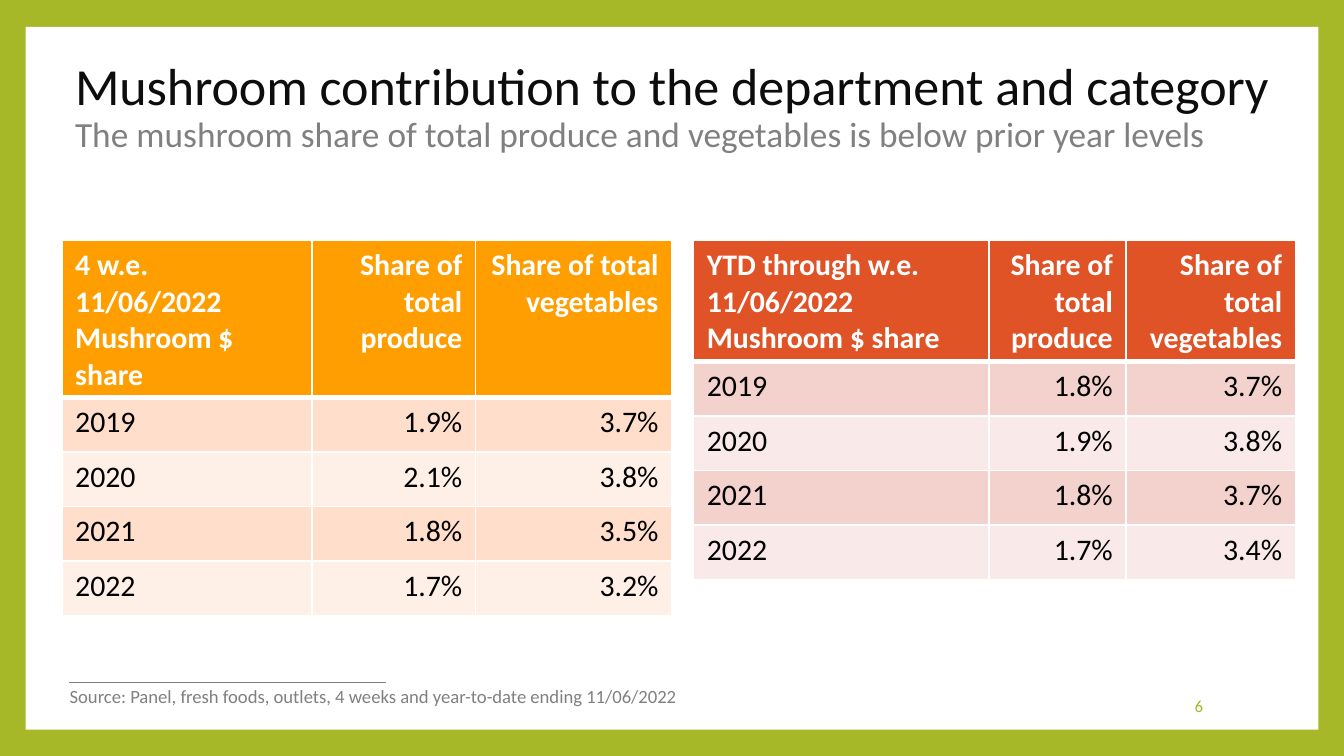
"""Build the mushroom share slide on a grid of tenths of an inch."""
from dataclasses import dataclass

from lxml.etree import SubElement
from pptx import Presentation
from pptx.dml.color import RGBColor
from pptx.enum.shapes import MSO_CONNECTOR, MSO_SHAPE
from pptx.enum.text import MSO_ANCHOR, PP_ALIGN
from pptx.oxml import parse_xml
from pptx.oxml.ns import nsdecls, qn
from pptx.util import Inches, Pt

COLS, ROWS = 100, 56.25
FONT = "Calibri"
HUES = {
    "green": "A6B727", "white": "FFFFFF", "ink": "0D0D0D", "black": "000000",
    "gray": "808080", "gold": "FE9E00", "peach": "FFDFCC", "cream": "FFF0E7",
    "rust": "DF5327", "rose": "F3D1CD", "blush": "F9E9E8",
}


@dataclass(frozen=True)
class Run:
    text: str
    size: float
    hue: str
    bold: bool = False


@dataclass(frozen=True)
class Label:
    box: tuple[float, float, float, float]
    runs: tuple[Run, ...]
    align: PP_ALIGN = PP_ALIGN.LEFT
    anchor: MSO_ANCHOR = MSO_ANCHOR.TOP
    pitch: float = 1.0


@dataclass(frozen=True)
class Grid:
    left: float
    widths: tuple[float, ...]
    head: tuple[str, str]
    shares: tuple[tuple[str, str], ...]
    fill: str
    bands: tuple[str, str]


TOP = 17.9
ROW = Pt(29.2)
YEARS = ("2019", "2020", "2021", "2022")
HEADS = ("Share of total produce", "Share of total vegetables")
LABELS = (
    Label((4.6, 5.3, 95.8, 5.4),
          (Run("Mushroom contribution to the department and category", 27.9, "ink"),
           Run("The mushroom share of total produce and vegetables is below prior year levels",
               18.9, "gray")),
          anchor=MSO_ANCHOR.MIDDLE, pitch=0.9),
    Label((76.5, 51, 14, 3), (Run("6", 9, "green"),), PP_ALIGN.RIGHT, MSO_ANCHOR.MIDDLE),
    Label((4.2, 50.5, 49.2, 2.7),
          (Run("Source: Panel, fresh foods, outlets, 4 weeks and year-to-date ending 11/06/2022",
               10, "gray"),)),
)
GRIDS = (
    Grid(4.6, (18.6, 12.2, 14.6), ("4 w.e. 11/06/2022", "Mushroom $ share"),
         (("1.9%", "3.7%"), ("2.1%", "3.8%"), ("1.8%", "3.5%"), ("1.7%", "3.2%")),
         "gold", ("peach", "cream")),
    Grid(51.6, (22, 10.2, 12.6), ("YTD through w.e. 11/06/2022", "Mushroom $ share"),
         (("1.8%", "3.7%"), ("1.9%", "3.8%"), ("1.8%", "3.7%"), ("1.7%", "3.4%")),
         "rust", ("rose", "blush")),
)


def span(units: float) -> int:
    return Inches(units / 10)


def tint(name: str) -> RGBColor:
    return RGBColor.from_string(HUES[name])


def write(frame, runs: tuple[Run, ...], align: PP_ALIGN, pitch: float = 1.0) -> None:
    para = frame.paragraphs[0]
    para.alignment = align
    para.line_spacing = pitch
    for i, item in enumerate(runs):
        if i:
            para.add_line_break()
        run = para.add_run()
        run.text = item.text
        run.font.name = FONT
        run.font.size = Pt(item.size)
        run.font.bold = item.bold
        run.font.color.rgb = tint(item.hue)


def add_label(slide, label: Label) -> None:
    frame = slide.shapes.add_textbox(*map(span, label.box)).text_frame
    frame.word_wrap = True
    frame.vertical_anchor = label.anchor
    write(frame, label.runs, label.align, label.pitch)


def edge(cell, row: int) -> None:
    widths = {"L": 1, "R": 1, "T": 3 if row == 1 else 1, "B": 3 if row == 0 else 1}
    props = cell._tc.get_or_add_tcPr()
    for i, (side, width) in enumerate(widths.items()):
        props.insert(i, parse_xml(
            f'<a:ln{side} {nsdecls("a")} w="{Pt(width)}"><a:solidFill>'
            f'<a:srgbClr val="{HUES["white"]}"/></a:solidFill></a:ln{side}>'))


def add_grid(slide, grid: Grid) -> None:
    lines = [(grid.head, *((head,) for head in HEADS))]
    lines += [((year,), *((share,) for share in pair))
              for year, pair in zip(YEARS, grid.shares)]
    table = slide.shapes.add_table(
        len(lines), len(grid.widths), span(grid.left), span(TOP),
        span(sum(grid.widths)), ROW * len(lines)).table
    for col, width in zip(table.columns, grid.widths):
        col.width = span(width)
    for r, line in enumerate(lines):
        table.rows[r].height = ROW
        fill = grid.bands[(r - 1) % 2] if r else grid.fill
        hue = "black" if r else "white"
        for c, texts in enumerate(line):
            cell = table.cell(r, c)
            cell.fill.solid()
            cell.fill.fore_color.rgb = tint(fill)
            edge(cell, r)
            write(cell.text_frame, tuple(Run(text, 16, hue, r == 0) for text in texts),
                  PP_ALIGN.RIGHT if c else PP_ALIGN.LEFT)


def add_panel(slide) -> None:
    panel = slide.shapes.add_shape(
        MSO_SHAPE.RECTANGLE, *map(span, (1.9, 2, 96.2, 52.3)))
    panel.shadow.inherit = False
    panel.fill.solid()
    panel.fill.fore_color.rgb = tint("white")
    panel.line.fill.background()


def add_rule(slide) -> None:
    rule = slide.shapes.add_connector(
        MSO_CONNECTOR.STRAIGHT, *map(span, (5.1, 50.8, 28.7, 50.8)))
    rule.line.color.rgb = tint("gray")
    rule.line.width = Pt(0.79)
    SubElement(rule._element.spPr, qn("a:effectLst"))


def main() -> None:
    deck = Presentation()
    deck.slide_width, deck.slide_height = span(COLS), span(ROWS)
    slide = deck.slides.add_slide(deck.slide_layouts[6])
    slide.background.fill.solid()
    slide.background.fill.fore_color.rgb = tint("green")
    add_panel(slide)
    add_rule(slide)
    for label in LABELS:
        add_label(slide, label)
    for grid in GRIDS:
        add_grid(slide, grid)
    deck.save("out.pptx")


if __name__ == "__main__":
    main()
